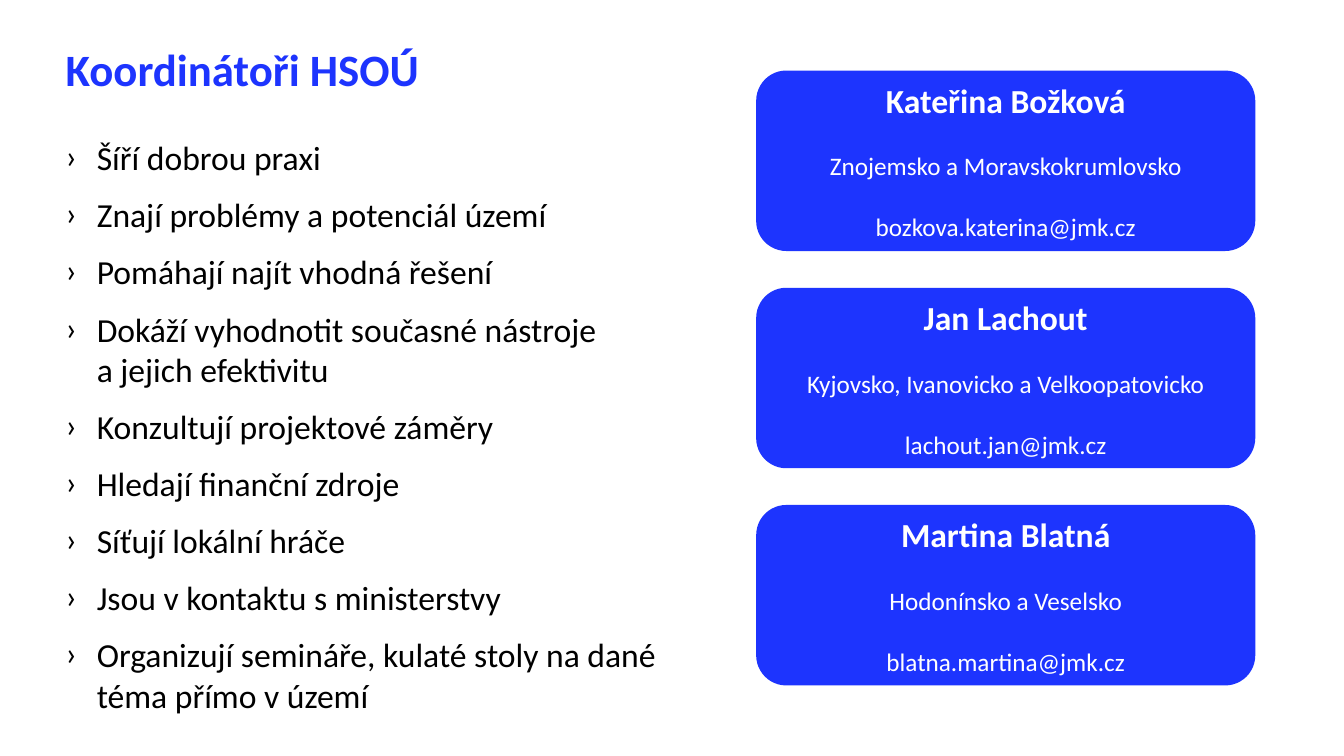
from dataclasses import dataclass

from lxml.etree import SubElement
from pptx import Presentation
from pptx.dml.color import RGBColor
from pptx.enum.shapes import MSO_SHAPE as Shape
from pptx.enum.text import MSO_ANCHOR as Anchor, MSO_AUTO_SIZE as Fit, PP_ALIGN as Align
from pptx.oxml.ns import qn
from pptx.util import Inches, Pt

BLUE = RGBColor(0x1D, 0x34, 0xFE)
WHITE = RGBColor(0xFF, 0xFF, 0xFF)
BLACK = RGBColor(0, 0, 0)
FONT = "Calibri"
INDENT = Inches(0.31)
CARD_TOP = 0.7
CARD_STEP = 2.155
LINE_GAP = Pt(22)


@dataclass
class Person:
    name: str
    region: str
    mail: str


TASKS = [
    "Šíří dobrou praxi",
    "Znají problémy a potenciál území",
    "Pomáhají najít vhodná řešení",
    "Dokáží vyhodnotit současné nástroje \na jejich efektivitu",
    "Konzultují projektové záměry",
    "Hledají finanční zdroje",
    "Síťují lokální hráče",
    "Jsou v kontaktu s ministerstvy",
    "Organizují semináře, kulaté stoly na dané téma přímo v území",
]

PEOPLE = [
    Person("Kateřina Božková", "Znojemsko a Moravskokrumlovsko", "bozkova.katerina@jmk.cz"),
    Person("Jan Lachout", "Kyjovsko, Ivanovicko a Velkoopatovicko", "lachout.jan@jmk.cz"),
    Person("Martina Blatná", "Hodonínsko a Veselsko", "blatna.martina@jmk.cz"),
]


def place(shape, left: float, top: float, width: float, height: float) -> None:
    shape.left, shape.top = Inches(left), Inches(top)
    shape.width, shape.height = Inches(width), Inches(height)


def write(para, text: str, size: int, color: RGBColor, bold: bool = False) -> None:
    para.text = text
    para.space_before = Pt(0)
    for run in para.runs:
        run.font.name = FONT
        run.font.size = Pt(size)
        run.font.bold = bold
        run.font.color.rgb = color


def add_bullet(para) -> None:
    props = para._p.get_or_add_pPr()
    props.set("marL", str(INDENT))
    props.set("indent", str(-INDENT))
    SubElement(props, qn("a:buFont"), typeface=FONT)
    SubElement(props, qn("a:buChar"), char="›")


def fill_title(title) -> None:
    place(title, 0.55, 0.09, 12.29, 1.25)
    frame = title.text_frame
    frame.auto_size = Fit.NONE
    frame.vertical_anchor = Anchor.MIDDLE
    para = frame.paragraphs[0]
    write(para, "Koordinátoři HSOÚ", 32, BLUE, True)
    para.alignment = Align.LEFT
    para.line_spacing = 0.9
    para.space_after = Pt(18)


def fill_list(body) -> None:
    place(body, 0.55, 1.31, 6.56, 5.89)
    frame = body.text_frame
    frame.auto_size = Fit.NONE
    for num, task in enumerate(TASKS):
        para = frame.add_paragraph() if num else frame.paragraphs[0]
        write(para, task, 24, BLACK)
        para.space_after = Pt(12)
        add_bullet(para)


def add_card(slide, person: Person, top: float) -> None:
    card = slide.shapes.add_shape(
        Shape.ROUNDED_RECTANGLE, Inches(7.5), Inches(top), Inches(4.95), Inches(1.79))
    card.shadow.inherit = False
    card.fill.solid()
    card.fill.fore_color.rgb = BLUE
    card.line.fill.background()
    frame = card.text_frame
    frame.word_wrap = True
    frame.vertical_anchor = Anchor.MIDDLE
    name = frame.paragraphs[0]
    region = frame.add_paragraph()
    mail = frame.add_paragraph()
    write(name, person.name, 24, WHITE, True)
    write(region, person.region, 18, WHITE)
    write(mail, person.mail, 18, WHITE)
    for para in frame.paragraphs:
        para.alignment = Align.CENTER
    name.space_after = region.space_after = LINE_GAP


def main() -> None:
    deck = Presentation()
    deck.slide_width, deck.slide_height = Inches(13.33), Inches(7.5)
    slide = deck.slides.add_slide(deck.slide_layouts[1])
    fill_title(slide.shapes.title)
    fill_list(slide.placeholders[1])
    for row, person in enumerate(PEOPLE):
        add_card(slide, person, CARD_TOP + row * CARD_STEP)
    deck.save("out.pptx")


if __name__ == "__main__":
    main()
